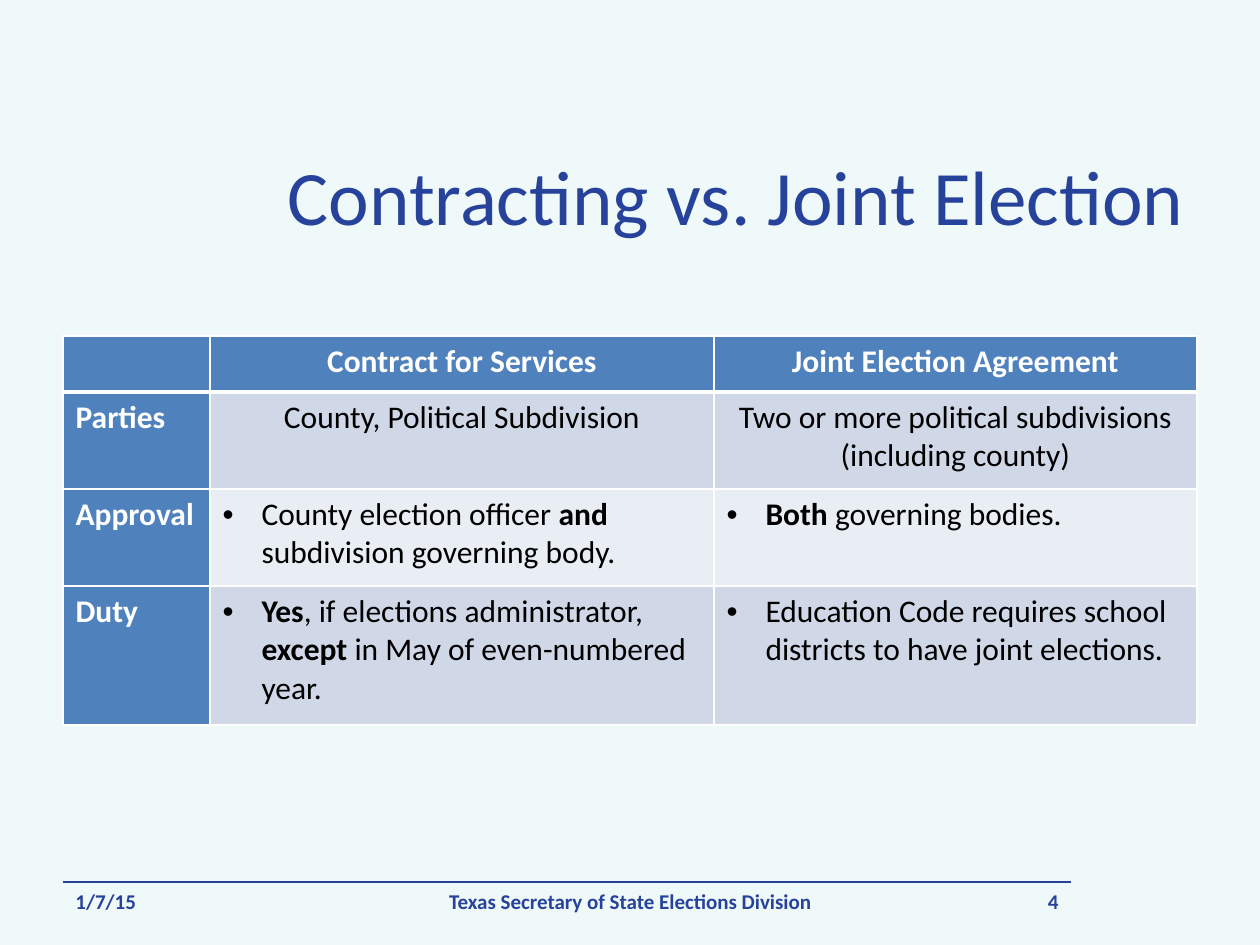
import lxml.etree
import pptx
import pptx.dml.color
import pptx.enum.shapes
import pptx.enum.text
import pptx.oxml.ns
import pptx.util

EMU_PER_PX = 914400 // 126
ALIGN = pptx.enum.text.PP_ALIGN
MIDDLE = pptx.enum.text.MSO_ANCHOR.MIDDLE
RGB = pptx.dml.color.RGBColor.from_string
qn = pptx.oxml.ns.qn

THEME = {
    "font": "Calibri",
    "background": RGB("F0F9FA"), "navy": RGB("26429A"),
    "header": RGB("4F81BD"), "bands": (RGB("E9EDF4"), RGB("D0D8E8")),
    "white": RGB("FFFFFF"), "black": RGB("000000"),
    "title_size": 44, "table_size": 18, "footer_size": 12,
}


def px(length):
    return pptx.util.Emu(length * EMU_PER_PX)


def write(para, spans, size, color, align):
    """Fill a paragraph with (text, bold) spans in one style."""
    para.alignment = align
    for text, bold in spans:
        span = para.add_run()
        span.text = text
        span.font.color.rgb = color
        style = {"name": THEME["font"], "size": pptx.util.Pt(size), "bold": bold}
        for name, value in style.items():
            setattr(span.font, name, value)


deck = pptx.Presentation()
deck.slide_width, deck.slide_height = px(1260), px(945)
page = deck.slides.add_slide(deck.slide_layouts[6])
page.background.fill.solid()
page.background.fill.fore_color.rgb = THEME["background"]

# Footer rule
rule = page.shapes.add_connector(
    pptx.enum.shapes.MSO_CONNECTOR.STRAIGHT, px(63), px(882), px(1071), px(882))
rule.line.color.rgb = THEME["navy"]
rule.line.width = pptx.util.Pt(0.75)
lxml.etree.SubElement(rule.element.spPr, qn("a:effectLst"))

# Title and footer: text, left, top, width, height, size, bold, alignment
TEXTS = [
    ("Contracting vs. Joint Election", 63, 116, 1134, 158, "title_size", False, ALIGN.RIGHT),
    ("1/7/15", 63, 876, 294, 50, "footer_size", True, ALIGN.LEFT),
    ("Texas Secretary of State Elections Division", 431, 876, 399, 50,
     "footer_size", True, ALIGN.CENTER),
    ("4", 924, 876, 147, 50, "footer_size", True, ALIGN.RIGHT),
]
for text, left, top, width, height, size, bold, align in TEXTS:
    box = page.shapes.add_textbox(px(left), px(top), px(width), px(height))
    box.text_frame.word_wrap = True
    box.text_frame.vertical_anchor = MIDDLE
    write(box.text_frame.paragraphs[0], [(text, bold)], THEME[size], THEME["navy"], align)

# Table: each cell is a list of paragraphs, each paragraph a list of spans
ROWS = [
    [[], [[("Contract for Services", True)]], [[("Joint Election Agreement", True)]]],
    [[[("Parties", True)]],
     [[("County, Political Subdivision", False)]],
     [[("Two or more political subdivisions", False)], [("(including county)", False)]]],
    [[[("Approval", True)]],
     [[("County election officer ", False), ("and", True),
       (" subdivision governing body.", False)]],
     [[("Both", True), (" governing bodies.", False)]]],
    [[[("Duty", True)]],
     [[("Yes", True), (", if elections administrator, ", False), ("except ", True),
       ("in May of even-numbered year.", False)]],
     [[("Education Code requires school districts to have joint elections.", False)]]],
]
COLUMN_WIDTHS = (147, 504, 483)
ROW_HEIGHTS = (56, 97, 97, 139)
BULLET_INDENT = 39

table = page.shapes.add_table(
    len(ROWS), len(COLUMN_WIDTHS), px(63), px(336),
    px(sum(COLUMN_WIDTHS)), px(sum(ROW_HEIGHTS))).table
for column, width in zip(table.columns, COLUMN_WIDTHS):
    column.width = px(width)
for row, height in zip(table.rows, ROW_HEIGHTS):
    row.height = px(height)

for r, row in enumerate(ROWS):
    for c, paragraphs in enumerate(row):
        cell = table.cell(r, c)
        heading = r == 0 or c == 0

        # White borders, heavier under the header row
        properties = cell._tc.get_or_add_tcPr()
        weights = {"lnL": 1, "lnR": 1, "lnT": 3 if r == 1 else 1, "lnB": 3 if r == 0 else 1}
        for side, weight in weights.items():
            line = lxml.etree.SubElement(
                properties, qn(f"a:{side}"), w=str(pptx.util.Pt(weight)))
            fill = lxml.etree.SubElement(line, qn("a:solidFill"))
            lxml.etree.SubElement(fill, qn("a:srgbClr"), val=str(THEME["white"]))

        cell.fill.solid()
        cell.fill.fore_color.rgb = THEME["header"] if heading else THEME["bands"][r % 2]

        # Cell text, bulleted in the lower two rows
        frame = cell.text_frame
        color = THEME["white"] if heading else THEME["black"]
        align = ALIGN.CENTER if r < 2 and c > 0 else ALIGN.LEFT
        for index, spans in enumerate(paragraphs):
            para = frame.add_paragraph() if index else frame.paragraphs[0]
            if r > 1 and c > 0:
                indents = para._p.get_or_add_pPr()
                indents.set("marL", str(px(BULLET_INDENT)))
                indents.set("indent", str(-px(BULLET_INDENT)))
                lxml.etree.SubElement(indents, qn("a:buFont"), typeface="Arial")
                lxml.etree.SubElement(indents, qn("a:buChar"), char="•")
            write(para, spans, THEME["table_size"], color, align)

deck.save("out.pptx")
